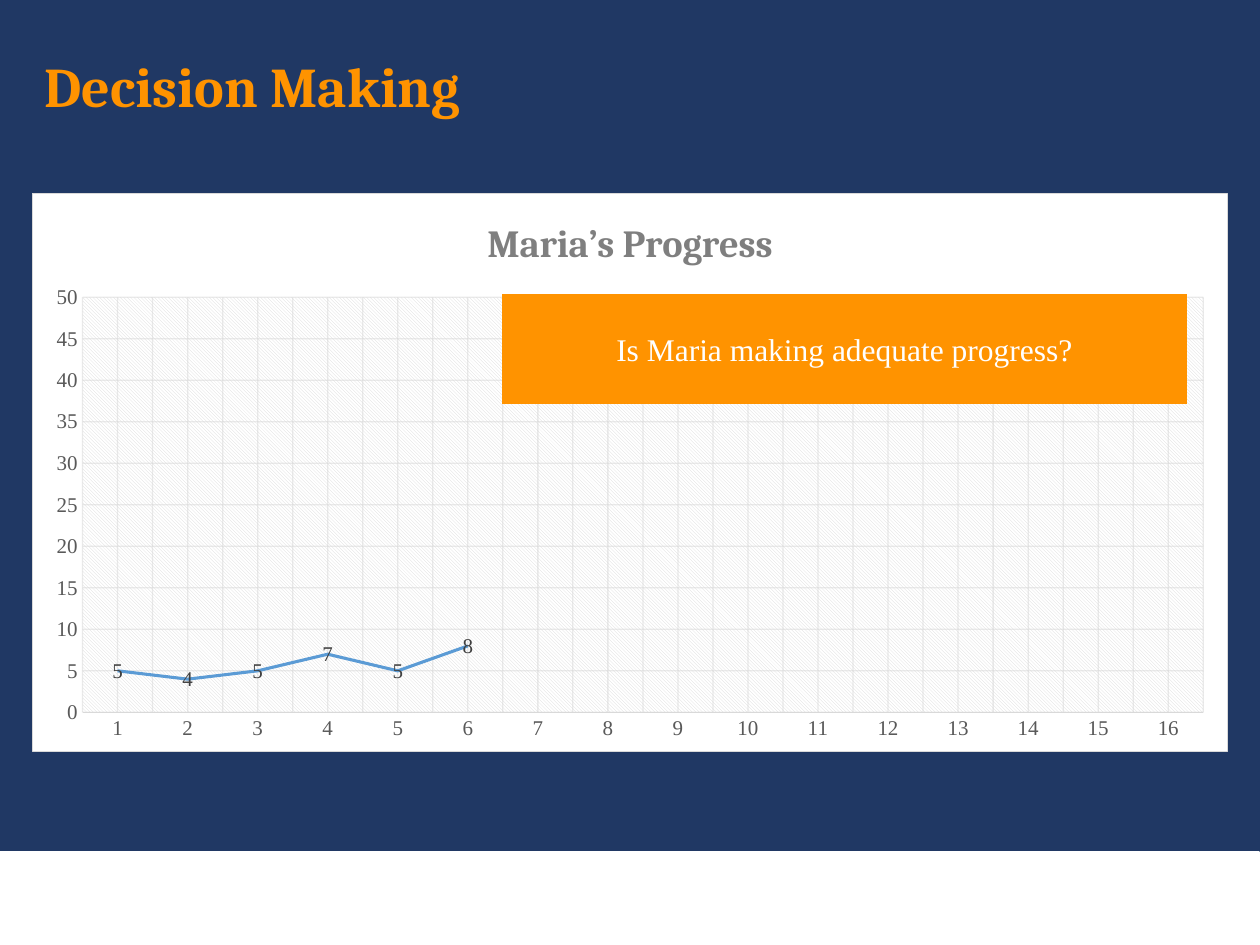
import copy

import pptx
import pptx.util
import pptx.chart.data
import pptx.dml.color
import pptx.enum.chart
import pptx.enum.shapes
import pptx.enum.text
import pptx.oxml
import pptx.oxml.ns

TITLE = "Decision Making"
NAME = "Maria’s Progress"
ASK = "Is Maria making adequate progress?"
WEEKS = [str(n) for n in range(1, 17)]
SCORES = [5, 4, 5, 7, 5, 8]

# left, top, width, height in px
SIZE = (1260, 945)
BAND = (0, 852, 1259, 93)
HEAD = (32, 32, 1196, 100)
CHART = (32, 193, 1196, 559)
PLOT = (82, 297, 1122, 416)
CALL = (502, 294, 685, 110)

THEME = {
    "navy": "203864", "orange": "FF9300", "white": "FFFFFF",
    "grid": "D9D9D9", "line": "5B9BD5", "name": "7F7F7F",
    "axis": "595959", "label": "404040",
    "serif": "Cambria", "body": "Times New Roman",
    "head": 32, "title": 22, "ask": 18, "tick": 12, "base": 10,
}
NS = ('xmlns:c="http://schemas.openxmlformats.org/drawingml/2006/chart" '
      'xmlns:a="http://schemas.openxmlformats.org/drawingml/2006/main"')
Pt = pptx.util.Pt
qn = pptx.oxml.ns.qn


def px(n):
    return pptx.util.Emu(round(n * 914400 / 126))


def rgb(key):
    return pptx.dml.color.RGBColor.from_string(THEME[key])


def style(font, size, color, face="body", bold=False):
    font.size, font.bold, font.name = Pt(THEME[size]), bold, THEME[face]
    font.color.rgb = rgb(color)


def write(frame, text, size, color, face="body", bold=False,
          align="LEFT", space=None):
    frame.word_wrap = True
    frame.vertical_anchor = pptx.enum.text.MSO_ANCHOR.MIDDLE
    para = frame.paragraphs[0]
    para.alignment = getattr(pptx.enum.text.PP_ALIGN, align)
    para.line_spacing = space
    run = para.add_run()
    run.text = text
    style(run.font, size, color, face, bold)


def rect(slide, area, fill, edge=None):
    kind = pptx.enum.shapes.MSO_SHAPE.RECTANGLE
    shape = slide.shapes.add_shape(kind, *map(px, area))
    shape.shadow.inherit = False
    shape.fill.solid()
    shape.fill.fore_color.rgb = rgb(fill)
    if edge:
        rule(shape.line, edge, 1)
    else:
        shape.line.fill.background()
    return shape


def rule(line, color="grid", width=0.75):
    line.color.rgb = rgb(color)
    line.width = Pt(width)


def tag(body):
    """Parse a chart element whose name opens body, adding the namespaces."""
    name, rest = body.split(">", 1)
    if name.endswith("/"):
        return pptx.oxml.parse_xml(f"{name[:-1]} {NS}/>{rest}")
    return pptx.oxml.parse_xml(f"{name} {NS}>{rest}")


def color(key):
    return f'<a:srgbClr val="{THEME[key]}"/>'


def frame_chart(chart):
    """Set the chart's background, border, plot pattern and plot place."""
    root = chart.element
    if root.find(qn("c:roundedCorners")) is None:
        root.find(qn("c:date1904")).addnext(tag('<c:roundedCorners val="0"/>'))
    root.find(qn("c:chart")).addnext(tag(
        f'<c:spPr><a:solidFill>{color("white")}</a:solidFill><a:ln w="9525">'
        f'<a:solidFill>{color("grid")}</a:solidFill></a:ln></c:spPr>'))
    plot = root.find(".//" + qn("c:plotArea"))
    old = plot.find(qn("c:layout"))
    if old is not None:
        plot.remove(old)
    left, top, wide, high = CHART
    parts = {"x": (PLOT[0] - left) / wide, "y": (PLOT[1] - top) / high,
             "w": PLOT[2] / wide, "h": PLOT[3] / high}
    modes = "".join(f'<c:{k}Mode val="edge"/>' for k in "xy")
    sizes = "".join(f'<c:{k} val="{v:.4f}"/>' for k, v in parts.items())
    plot.insert(0, tag(
        '<c:layout><c:manualLayout><c:layoutTarget val="inner"/>'
        f'{modes}{sizes}</c:manualLayout></c:layout>'))
    plot.append(tag(
        f'<c:spPr><a:pattFill prst="ltDnDiag"><a:fgClr>{color("grid")}</a:fgClr>'
        f'<a:bgClr>{color("white")}</a:bgClr></a:pattFill></c:spPr>'))


def style_grids(chart):
    """Make major gridlines translucent and minor ones look the same."""
    for major in chart.element.iter(qn("c:majorGridlines")):
        for hue in major.iter(qn("a:srgbClr")):
            hue.append(tag('<a:alpha val="54000"/>'))
        minor = major.getparent().find(qn("c:minorGridlines"))
        if minor is not None:
            minor.append(copy.deepcopy(major.find(qn("c:spPr"))))


def style_axis(axis):
    none = pptx.enum.chart.XL_TICK_MARK.NONE
    axis.major_tick_mark = axis.minor_tick_mark = none
    style(axis.tick_labels.font, "tick", "axis")
    axis.has_major_gridlines = True
    rule(axis.major_gridlines.format.line)


def add_progress(slide):
    data = pptx.chart.data.CategoryChartData()
    data.categories = WEEKS
    blanks = [None] * (len(WEEKS) - len(SCORES))
    data.add_series("Series 1", SCORES + blanks)
    kind = pptx.enum.chart.XL_CHART_TYPE.LINE
    chart = slide.shapes.add_chart(kind, *map(px, CHART), data).chart
    style(chart.font, "base", "label")
    chart.has_legend = False
    chart.has_title = True
    write(chart.chart_title.text_frame, NAME, "title", "name",
          face="serif", bold=True, align="CENTER")

    cats, vals = chart.category_axis, chart.value_axis
    for axis in (cats, vals):
        style_axis(axis)
    rule(cats.format.line)
    cats.has_minor_gridlines = True
    vals.format.line.fill.background()
    vals.minimum_scale, vals.maximum_scale, vals.major_unit = 0, 50, 5
    style_grids(chart)

    plot = chart.plots[0]
    plot.vary_by_categories = False
    line = plot.series[0]
    line.smooth = False
    line.marker.style = pptx.enum.chart.XL_MARKER_STYLE.NONE
    rule(line.format.line, "line", 1.75)
    labels = line.data_labels
    labels.show_value = True
    labels.position = pptx.enum.chart.XL_LABEL_POSITION.CENTER
    style(labels.font, "tick", "label")
    frame_chart(chart)


def main():
    deck = pptx.Presentation()
    deck.slide_width, deck.slide_height = map(px, SIZE)
    slide = deck.slides.add_slide(deck.slide_layouts[6])
    slide.background.fill.solid()
    slide.background.fill.fore_color.rgb = rgb("navy")
    rect(slide, BAND, "white", edge="white")
    head = rect(slide, HEAD, "navy")
    write(head.text_frame, TITLE, "head", "orange",
          face="serif", bold=True, space=1.1)
    add_progress(slide)
    call = rect(slide, CALL, "orange")
    write(call.text_frame, ASK, "ask", "white", align="CENTER")
    deck.save("out.pptx")


if __name__ == "__main__":
    main()
